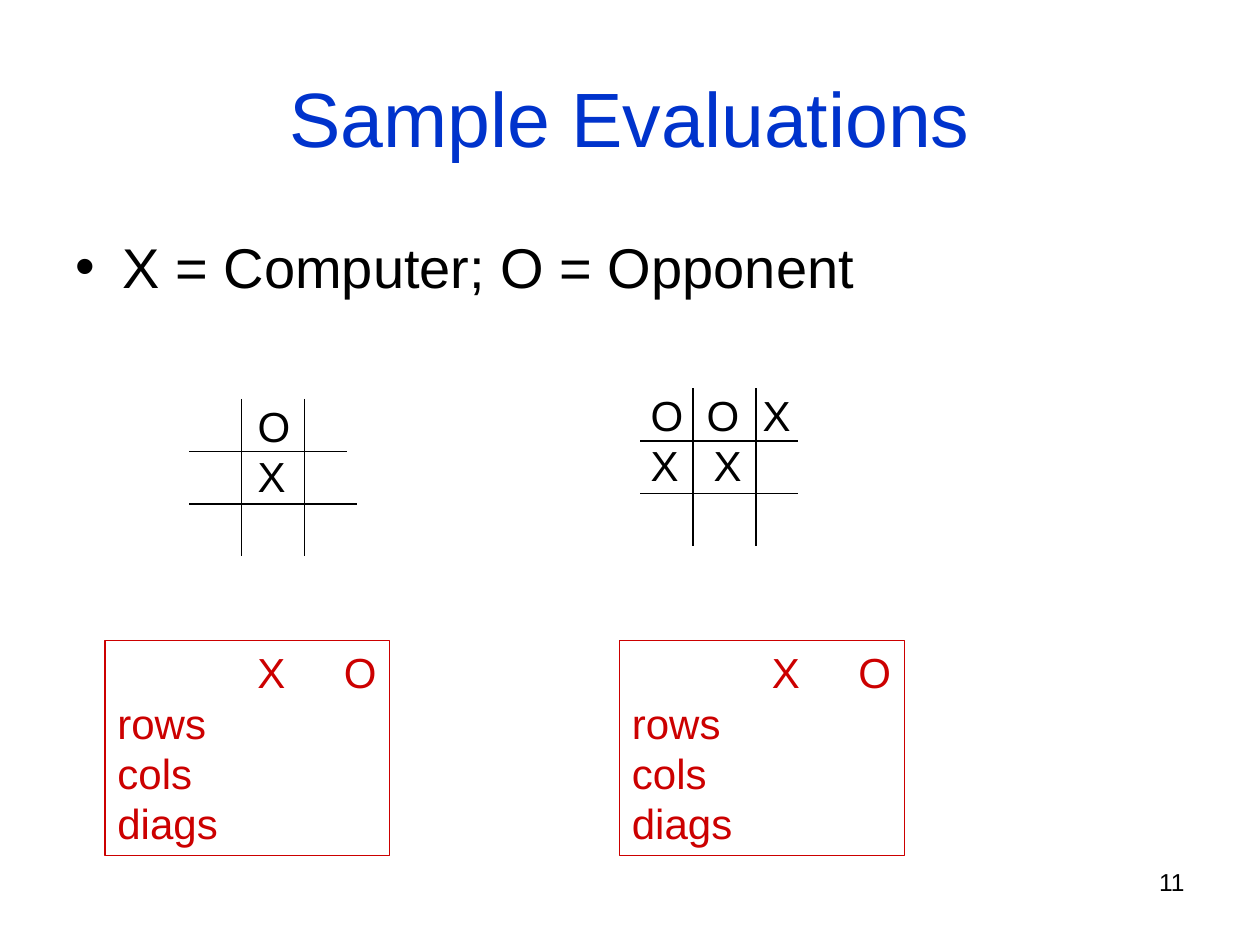
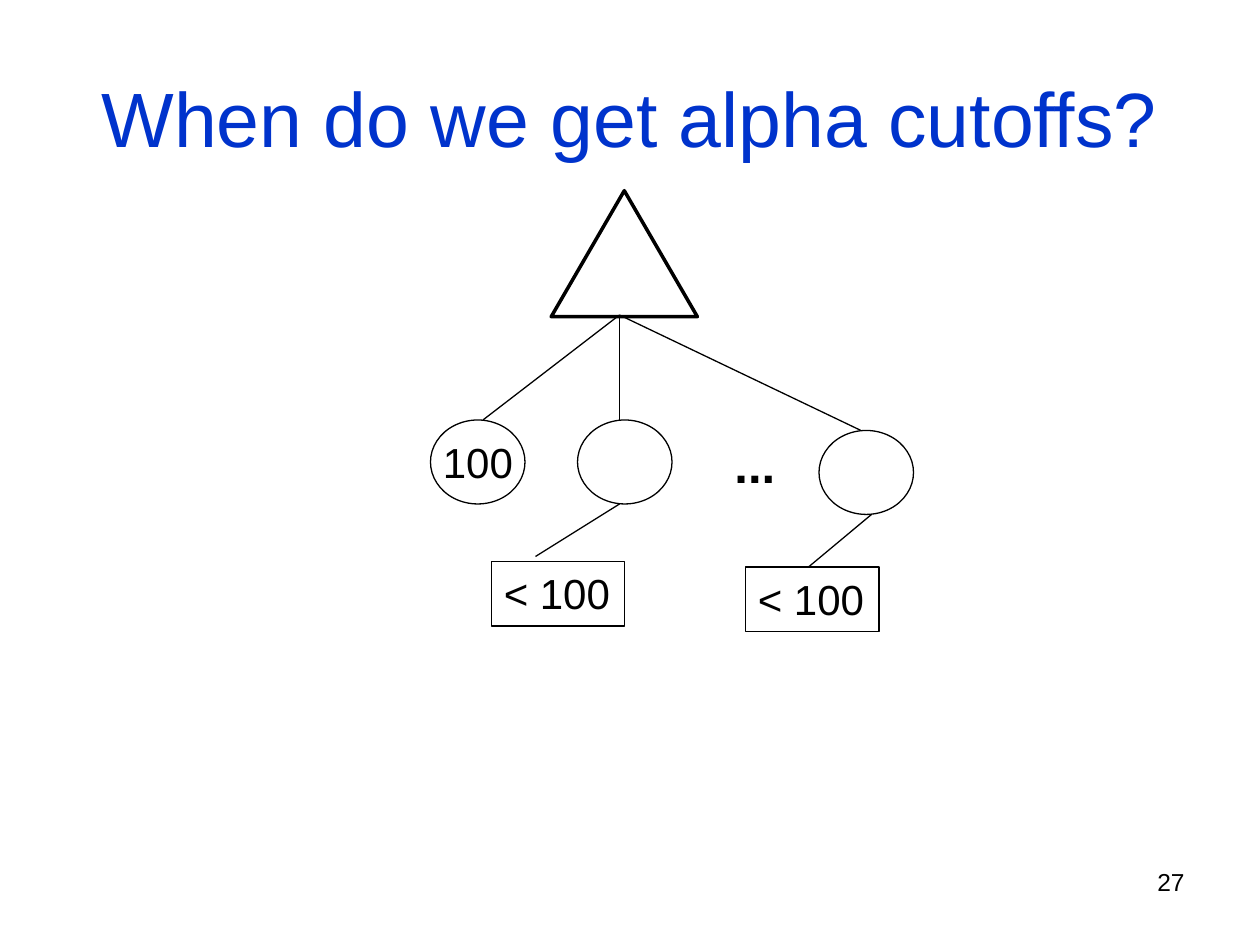
from pptx import Presentation
from pptx.dml.color import RGBColor
from pptx.enum.shapes import MSO_CONNECTOR as CONN, MSO_SHAPE as SHAPE
from pptx.enum.text import MSO_ANCHOR as ANCHOR, PP_ALIGN as ALIGN
from pptx.oxml.ns import qn
from pptx.util import Pt
from lxml.etree import SubElement

BLACK = RGBColor(0x00, 0x00, 0x00)
BLUE = RGBColor(0x00, 0x33, 0xCC)
RED = RGBColor(0xCC, 0x00, 0x00)
FONT = "Arial"
LABEL = {"size": Pt(24)}
LABEL_FRAME = {"margin_right": Pt(0)}
TITLE = {"size": Pt(44), "color": BLUE}
BODY = {"size": Pt(32)}
NUMBER = {"size": Pt(14)}
DOTS = {"size": Pt(28), "bold": True}


def set_all(obj, values):
    for name, value in values.items():
        setattr(obj, name, value)


def set_tabs(p, stops):
    if stops:
        tabs = SubElement(p._p.get_or_add_pPr(), qn("a:tabLst"))
        for stop in stops:
            SubElement(tabs, qn("a:tab"), pos=str(Pt(stop)), algn="l")


def set_bullet(p, indent):
    pPr = p._p.get_or_add_pPr()
    set_all_xml = {"marL": str(Pt(indent)), "indent": str(-Pt(indent))}
    pPr.attrib.update(set_all_xml)
    SubElement(pPr, qn("a:buFont"), typeface=FONT)
    SubElement(pPr, qn("a:buChar"), char="•")


def write(tf, rows, style, align=ALIGN.LEFT, frame=LABEL_FRAME):
    set_all(tf, {"word_wrap": True, "vertical_anchor": ANCHOR.TOP, **frame})
    font = {"name": FONT, **style}
    color = font.pop("color", BLACK)
    for i, (text, stops) in enumerate(rows):
        p = tf.paragraphs[0] if i == 0 else tf.add_paragraph()
        p.alignment = align
        set_tabs(p, stops)
        r = p.add_run()
        r.text = text
        set_all(r.font, font)
        r.font.color.rgb = color


def add_text(s, box, rows, style, **options):
    tb = s.shapes.add_textbox(*map(Pt, box))
    write(tb.text_frame, rows, style, **options)
    return tb.text_frame


def add_outline(s, kind, box, color=BLACK, width=0.75):
    sp = s.shapes.add_shape(kind, *map(Pt, box))
    sp.shadow.inherit = False
    sp.fill.background()
    sp.line.color.rgb = color
    sp.line.width = Pt(width)
    return sp


def add_line(s, x1, y1, x2, y2):
    line = s.shapes.add_connector(CONN.STRAIGHT, Pt(x1), Pt(y1), Pt(x2), Pt(y2))
    line.line.color.rgb = BLACK
    line.line.width = Pt(0.75)
    SubElement(line._element.spPr, qn("a:effectLst"))


def add_slide(prs, title, number):
    s = prs.slides.add_slide(prs.slide_layouts[6])
    add_text(s, (516, 492, 168, 37.5), [(number, ())], NUMBER,
             align=ALIGN.RIGHT, frame={})
    add_text(s, (36, 21.6, 648, 90), [(title, ())], TITLE,
             align=ALIGN.CENTER, frame={"vertical_anchor": ANCHOR.MIDDLE})
    return s


def add_board(s, x, y, rows, bottom_length=90):
    add_text(s, (x - 1.2, y - 2.9, 100.8, 93.6), rows, LABEL)
    for dx in (30, 66):
        add_line(s, x + dx, y, x + dx, y + 90)
    for dy, length in ((30, 90), (60, bottom_length)):
        add_line(s, x, y + dy, x + length, y + dy)


def add_score_box(s, x):
    sp = add_outline(s, SHAPE.RECTANGLE, (x, 366, 162.75, 123), RED)
    rows = [("\tX\tO", (80, 129.4)), ("rows", ()), ("cols", ()), ("diags", ())]
    write(sp.text_frame, rows, {**LABEL, "color": RED})


def add_bound(s, x, y):
    sp = add_outline(s, SHAPE.RECTANGLE, (x, y, 76.3, 36.7))
    write(sp.text_frame, [("< 100", ())], LABEL)


def build_evaluations(prs):
    s = add_slide(prs, "Sample Evaluations", "11")
    tf = add_text(s, (36, 126, 648, 356.4), [("X = Computer; O = Opponent", ())],
                  BODY, frame={"margin_top": Pt(6.8)})
    set_bullet(tf.paragraphs[0], 27)
    add_board(s, 108, 228, [("\tO", (33.3,)), ("\tX", (33.3,))], bottom_length=96)
    add_board(s, 366, 222, [("O\tO\tX", (32, 64)), ("X\tX", (36,))])
    for x in (60, 354):
        add_score_box(s, x)


def build_cutoffs(prs):
    s = add_slide(prs, "When do we get alpha cutoffs?", "27")
    for x, y in ((246, 240), (330, 240), (468, 246)):
        add_outline(s, SHAPE.OVAL, (x, y, 54, 48))
    add_text(s, (412.6, 244.8, 37.4, 41), [("...", ())], DOTS)
    add_text(s, (246, 246, 54.7, 36), [("100", ())], LABEL)
    add_bound(s, 280.8, 321)
    add_bound(s, 426, 324)
    add_line(s, 354, 288, 306, 318)
    add_line(s, 498, 294, 462, 324)
    for x, y in ((276, 240), (354, 240), (492, 246)):
        add_line(s, 354, 180, x, y)
    add_outline(s, SHAPE.ISOSCELES_TRIANGLE, (315, 109, 83.5, 72), width=2)


def main():
    prs = Presentation()
    prs.slide_width, prs.slide_height = Pt(720), Pt(540)
    build_evaluations(prs)
    build_cutoffs(prs)
    prs.save("out.pptx")


if __name__ == "__main__":
    main()
